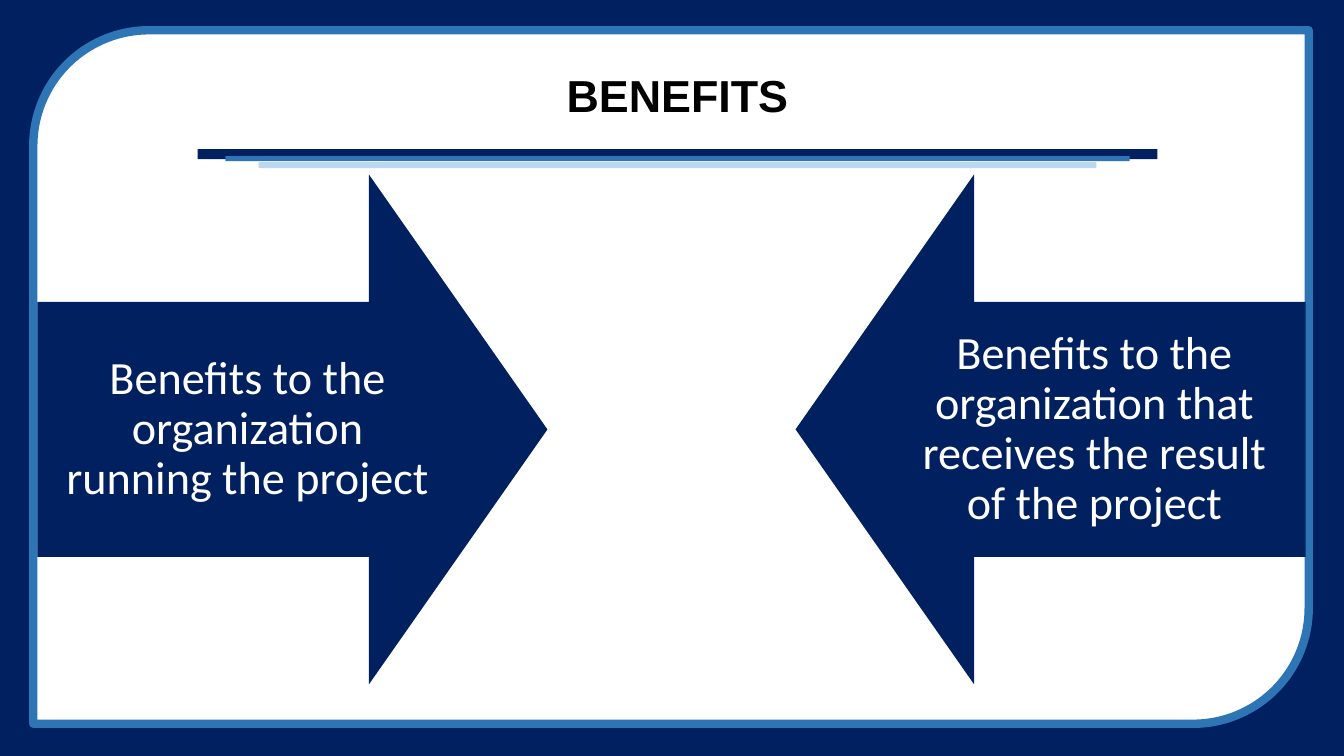
import pptx
import pptx.dml.color
import pptx.enum.shapes
import pptx.enum.text
import pptx.util

Inches = pptx.util.Inches
Pt = pptx.util.Pt
SHAPE = pptx.enum.shapes.MSO_SHAPE

NAVY, BLUE, PALE, WHITE, BLACK = "002060", "2E75B6", "BDD7EE", "FFFFFF", "000000"
SLIDE_W, SLIDE_H = 13.33, 7.5

TITLE = "BENEFITS"
TITLE_BOX = (1.96, 0.49, 9.52, 0.97)
PANEL_BOX = (0.33, 0.3, 12.65, 6.88)
# top, width, height, colour of each bar under the title
RULES = [
    (1.48, 9.52, 0.1, NAVY),
    (1.55, 8.97, 0.05, BLUE),
    (1.61, 8.31, 0.06, PALE),
]
RULE_CENTER = 6.72
# text, arrow left, text left, rotation
BENEFITS = [
    ("Benefits to the organization running the project", 0.37, 0.37, 270),
    ("Benefits to the organization that receives the result of the project",
     7.89, 8.77, 90),
]
ARROW_TOP, ARROW_SIZE = 1.73, 5.06
LABEL_W, LABEL_H, LABEL_INSET = 4.17, 2.53, 0.26


def rgb(value):
    return pptx.dml.color.RGBColor.from_string(value)


def add_block(slide, preset, box, color, rotation=0):
    block = slide.shapes.add_shape(preset, *map(Inches, box))
    block.shadow.inherit = False
    block.fill.solid()
    block.fill.fore_color.rgb = rgb(color)
    block.line.fill.background()
    block.rotation = rotation
    return block


def write(frame, text, color, inset, font_format):
    """Fill a frame with one centred paragraph."""
    frame.text = text
    frame_format = {
        "word_wrap": True,
        "auto_size": pptx.enum.text.MSO_AUTO_SIZE.NONE,
        "vertical_anchor": pptx.enum.text.MSO_ANCHOR.MIDDLE,
    }
    for name, value in frame_format.items():
        setattr(frame, name, value)
    for side in ("left", "top", "right", "bottom"):
        setattr(frame, f"margin_{side}", Inches(inset))
    paragraph = frame.paragraphs[0]
    paragraph.alignment = pptx.enum.text.PP_ALIGN.CENTER
    paragraph.line_spacing = 0.9
    font = paragraph.runs[0].font
    for name, value in font_format.items():
        setattr(font, name, value)
    font.color.rgb = rgb(color)


def main():
    deck = pptx.Presentation()
    deck.slide_width, deck.slide_height = Inches(SLIDE_W), Inches(SLIDE_H)
    slide = deck.slides.add_slide(deck.slide_layouts[5])

    add_block(slide, SHAPE.RECTANGLE, (0, 0, SLIDE_W, SLIDE_H), NAVY)
    panel = add_block(slide, SHAPE.ROUND_2_DIAG_RECTANGLE, PANEL_BOX, WHITE, 180)
    panel.line.color.rgb = rgb(BLUE)
    panel.line.width = Pt(6)
    for top, width, height, color in RULES:
        add_block(slide, SHAPE.RECTANGLE,
                  (RULE_CENTER - width / 2, top, width, height), color)

    title = slide.shapes.title
    title.element.getparent().append(title.element)  # in front of the panel
    title.left, title.top, title.width, title.height = map(Inches, TITLE_BOX)
    write(title.text_frame, TITLE, BLACK, 0.05,
          {"name": "Arial", "size": Pt(32), "bold": True})

    label_top = ARROW_TOP + (ARROW_SIZE - LABEL_H) / 2
    for text, arrow_left, label_left, rotation in BENEFITS:
        arrow = add_block(slide, SHAPE.DOWN_ARROW,
                          (arrow_left, ARROW_TOP, ARROW_SIZE, ARROW_SIZE),
                          NAVY, rotation)
        arrow.adjustments[0], arrow.adjustments[1] = 0.5, 0.35
        label = slide.shapes.add_textbox(
            *map(Inches, (label_left, label_top, LABEL_W, LABEL_H)))
        write(label.text_frame, text, WHITE, LABEL_INSET,
              {"name": "Calibri", "size": Pt(33)})

    deck.save("out.pptx")


if __name__ == "__main__":
    main()
